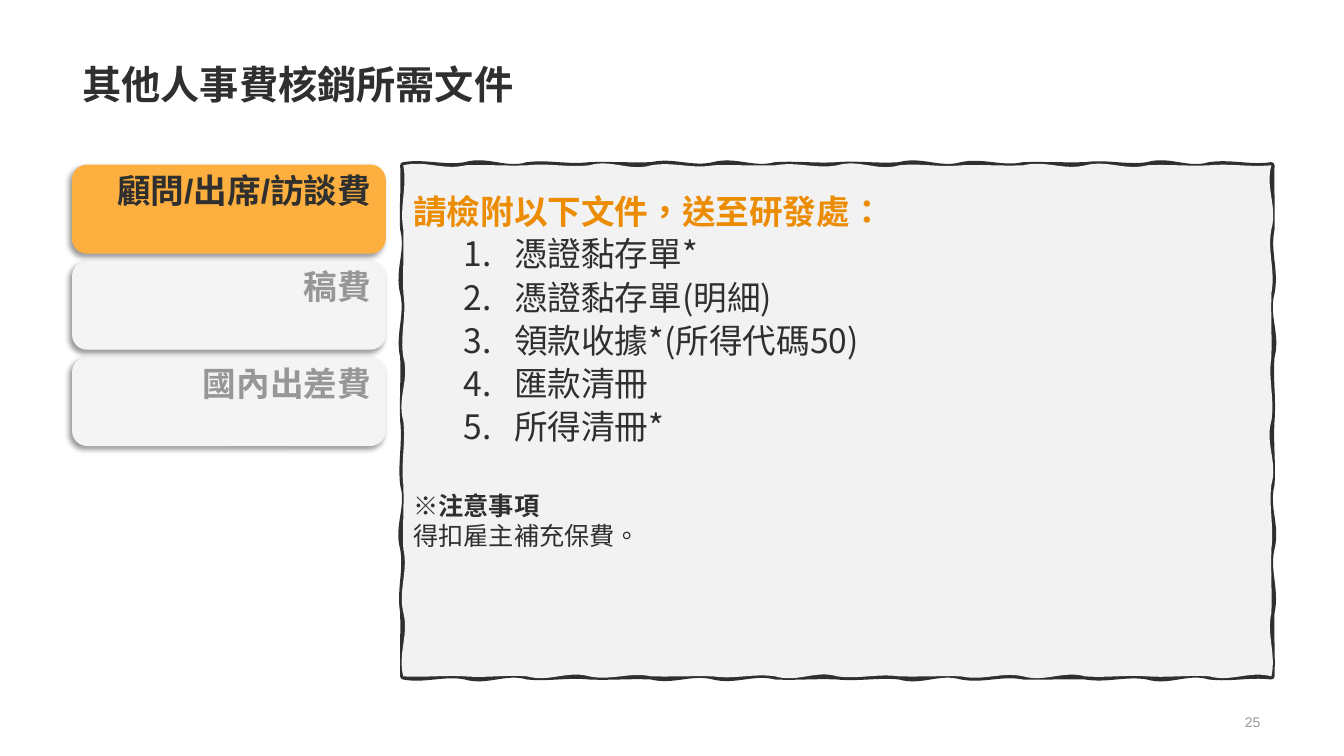
from copy import deepcopy
from math import sin

from lxml import etree
from pptx import Presentation
from pptx import util as u
from pptx.dml.color import RGBColor
from pptx.enum import lang, shapes, text
from pptx.oxml.ns import qn

DARK, GREY, ORANGE = "2F2F2F", "979797", "EB8C02"
NOTO = "Noto Sans CJK SC"
LEFT, RIGHT = text.PP_ALIGN.LEFT, text.PP_ALIGN.RIGHT


def color(code):
    return RGBColor.from_string(code)


def write(para, words, size, code, bold=False, face="Arial", space=1.0, align=LEFT):
    """Fill one paragraph and style it as a whole."""
    run = para.add_run()
    run.text = words
    run.font.language_id = lang.MSO_LANGUAGE_ID.TRADITIONAL_CHINESE
    para.line_spacing = space
    para.alignment = align
    font = para.font
    font.name, font.size, font.bold = face, u.Pt(size), bold
    font.color.rgb = color(code)


deck = Presentation()
deck.slide_width, deck.slide_height = u.Inches(13.33), u.Inches(7.5)
slide = deck.slides.add_slide(deck.slide_layouts[6])
items = slide.shapes

# Title and page number
title = items.add_textbox(u.Inches(0.72), 0, u.Inches(11.88), u.Inches(1.12)).text_frame
title.word_wrap = True
title.vertical_anchor = text.MSO_ANCHOR.BOTTOM
write(title.paragraphs[0], "其他人事費核銷所需文件", 28, DARK, True, space=0.9)

page = items.add_textbox(u.Inches(9.69), u.Inches(7.04), u.Inches(2.91), u.Inches(0.24)).text_frame
page.word_wrap = True
page.vertical_anchor = text.MSO_ANCHOR.MIDDLE
write(page.paragraphs[0], "25", 10, GREY, align=RIGHT)

# Tabs on the left, the first one active
tabs = [
    ("顧問/出席/訪談費", "FDB03F", DARK, 1),
    ("稿費", "F4F4F4", GREY, 0.75),
    ("國內出差費", "F4F4F4", GREY, 0.75),
]
for row, (label, fill, ink, edge) in enumerate(tabs):
    tab = items.add_shape(shapes.MSO_SHAPE.ROUNDED_RECTANGLE, u.Inches(0.72),
                          u.Inches(1.64 + 0.955 * row), u.Inches(3.1), u.Inches(0.87))
    tab.fill.solid()
    tab.fill.fore_color.rgb = color(fill)
    tab.line.color.rgb = color(fill)
    tab.line.width = u.Pt(edge)
    tab.shadow.inherit = False
    cast = etree.SubElement(tab.element.spPr.find(qn("a:effectLst")), qn("a:outerShdw"),
                            blurRad=str(u.Pt(4)), dist=str(u.Pt(3)), dir="8100000",
                            algn="tr", rotWithShape="0")
    black = etree.SubElement(cast, qn("a:srgbClr"), val="000000")
    etree.SubElement(black, qn("a:alpha"), val="40000")
    frame = tab.text_frame
    frame.word_wrap = True
    frame.margin_left = u.Inches(0.2)
    frame.vertical_anchor = text.MSO_ANCHOR.TOP
    write(frame.paragraphs[0], label, 24, ink, True, space=0.9, align=RIGHT)

# Hand-drawn panel: even stops along each side of a rectangle
left, top, right, low = 4, 1.64, 12.61, 6.71
corners = [(left, top), (right, top), (right, low), (left, low), (left, top)]
stops = [(left, top)]
for (x1, y1), (x2, y2), count in zip(corners, corners[1:], (14, 8, 14, 8)):
    stops += [(x1 + (x2 - x1) * n / count, y1 + (y2 - y1) * n / count)
              for n in range(1, count + 1)]
dots = [(u.Inches(x), u.Inches(y)) for x, y in stops]
pen = items.build_freeform(*dots[0])
pen.add_line_segments(dots[1:], close=True)
panel = pen.convert_to_shape()
panel.shadow.inherit = False
panel.fill.solid()
panel.fill.fore_color.rgb = color("F2F2F2")
panel.line.color.rgb = color(DARK)
panel.line.width = u.Pt(4.5)

# A wavy outline without fill, then a wavy fill without outline on top
outline = panel.element.spPr.find(qn("a:custGeom")).find(qn("a:pathLst"))[0]
cover = deepcopy(outline)
outline.addnext(cover)
outline.set("fill", "none")
cover.set("stroke", "0")
for path, phase in ((outline, 0), (cover, 2.5)):
    for n, side in enumerate(path.findall(qn("a:lnTo"))):
        (x1, y1), (x2, y2) = stops[n], stops[n + 1]
        wave = 0.035 + 0.03 * sin(1.7 * n + phase)
        flat = abs(y1 - y2) < 0.01
        side.tag = qn("a:cubicBezTo")
        for spot, (part, shift) in enumerate(((0.35, -wave), (0.65, wave))):
            x = x1 + (x2 - x1) * part + (0 if flat else shift) - left
            y = y1 + (y2 - y1) * part + (shift if flat else 0) - top
            side.insert(spot, side.makeelement(
                qn("a:pt"), {"x": str(u.Inches(x)), "y": str(u.Inches(y))}))

# Panel text
body = panel.text_frame
body.word_wrap = True
body.vertical_anchor = text.MSO_ANCHOR.TOP
write(body.paragraphs[0], "請檢附以下文件，送至研發處：", 24, ORANGE, True, NOTO, 1.5)
papers = ["憑證黏存單*", "憑證黏存單(明細)", "領款收據*(所得代碼50)", "匯款清冊", "所得清冊*"]
for paper in papers:
    para = body.add_paragraph()
    props = para._p.get_or_add_pPr()
    props.set("marL", str(u.Inches(1)))
    props.set("indent", str(u.Inches(-0.5)))
    etree.SubElement(props, qn("a:buFont"), typeface=NOTO)
    etree.SubElement(props, qn("a:buAutoNum"), type="arabicPeriod")
    para.space_before = u.Pt(5)
    write(para, paper, 24, DARK, False, NOTO, 0.9)

for note, bold, gap in (("※注意事項", True, 31), ("得扣雇主補充保費。", False, 0)):
    para = body.add_paragraph()
    para.space_before = u.Pt(gap)
    write(para, note, 18, DARK, bold)

deck.save("out.pptx")
